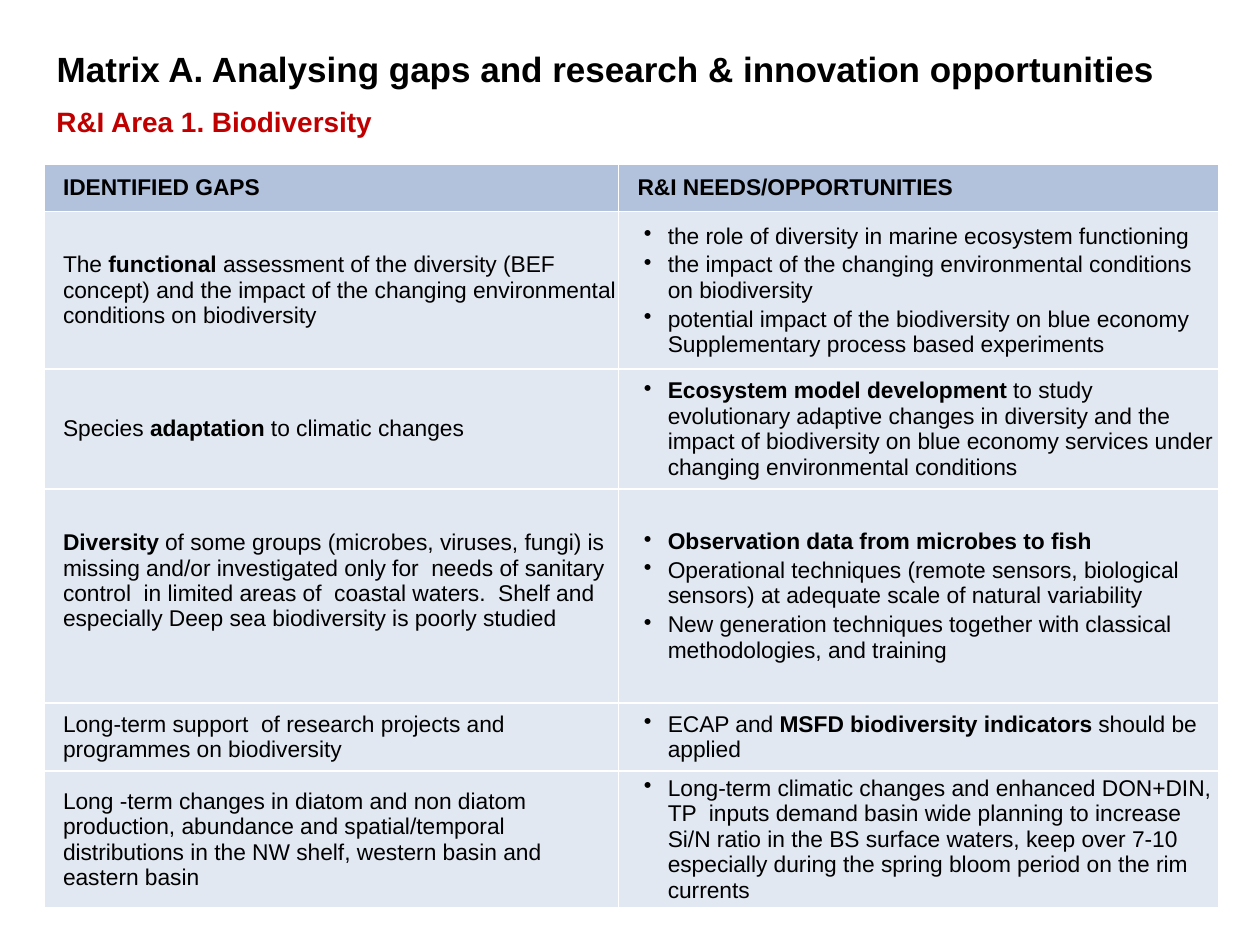
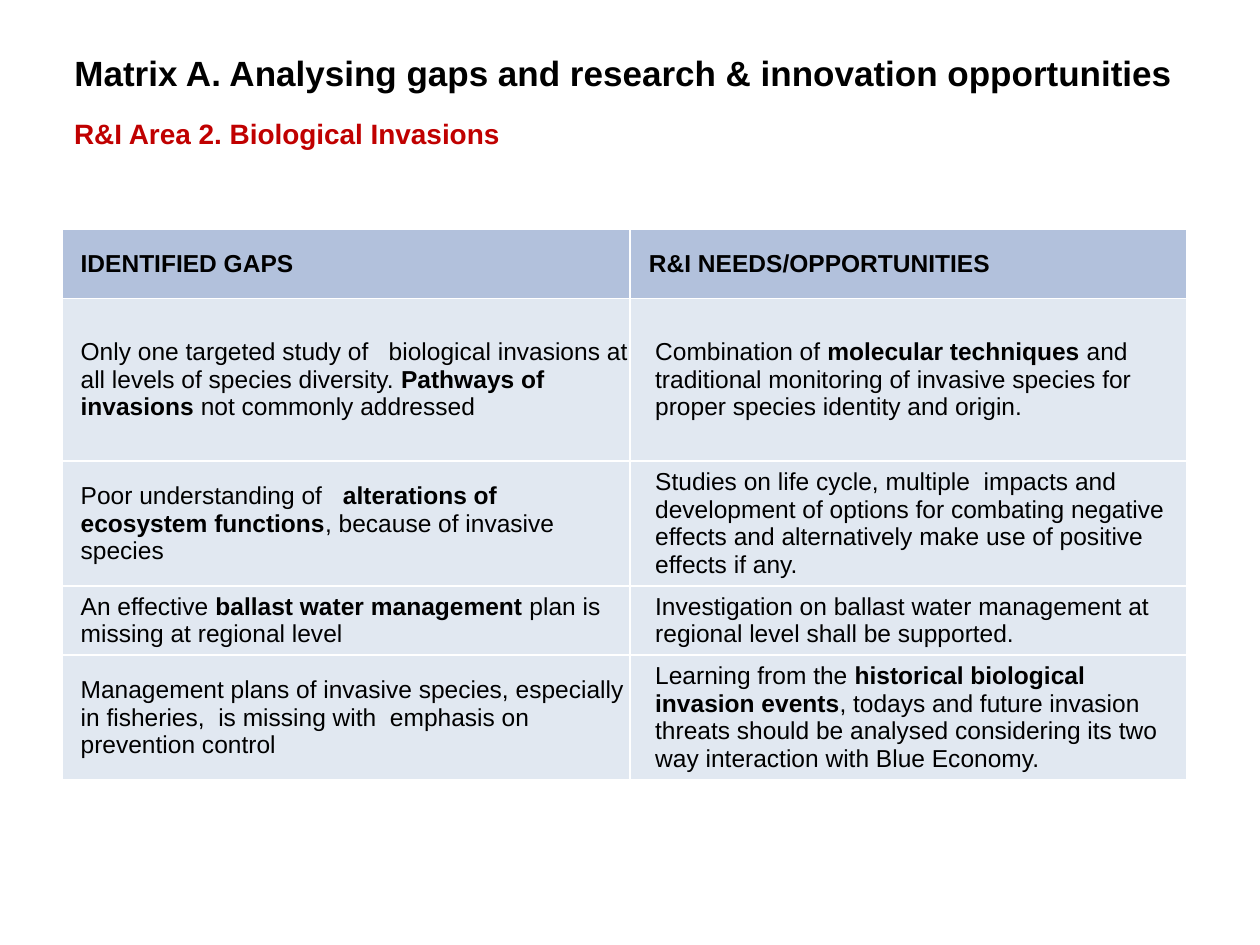
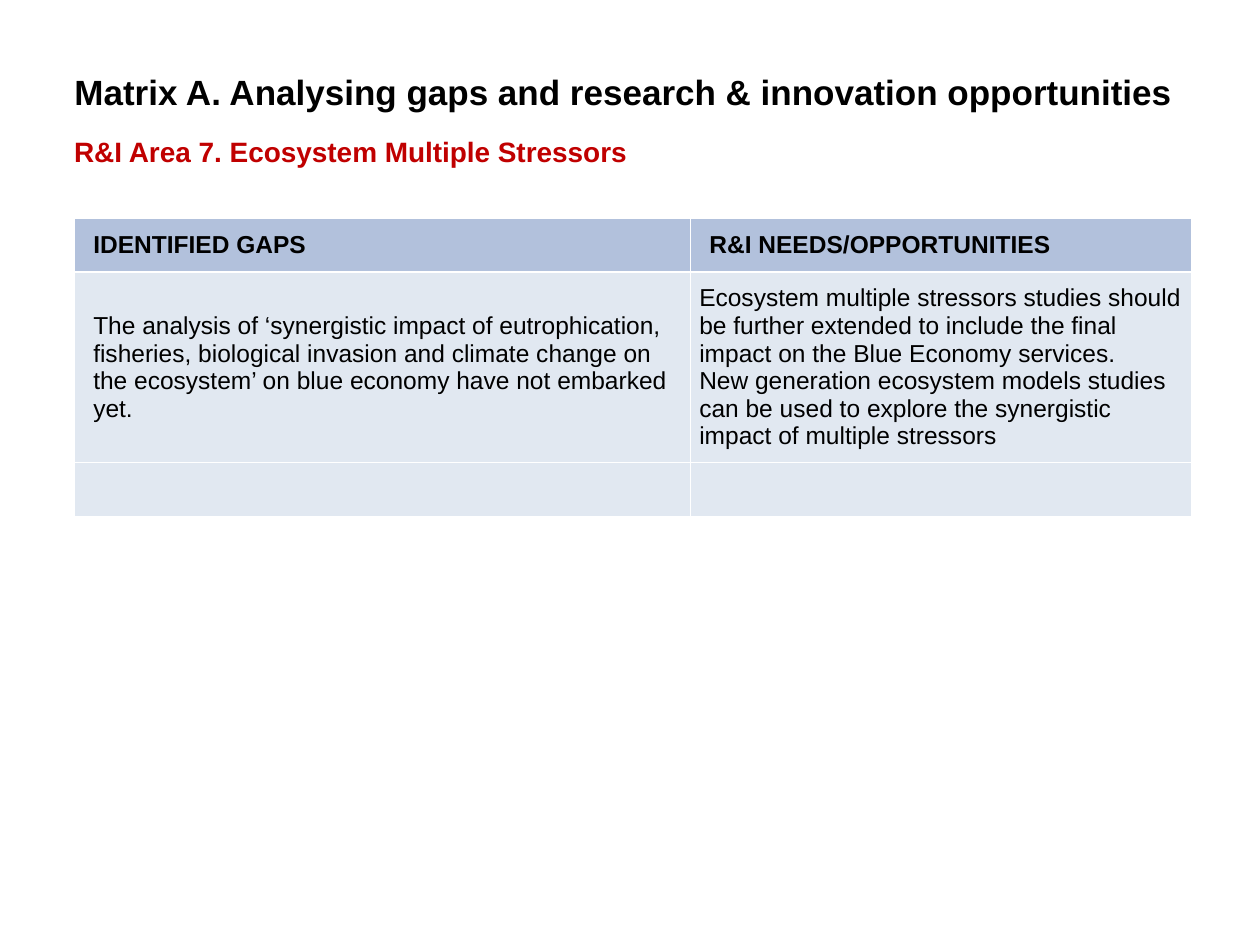
from dataclasses import dataclass

from lxml import etree
from pptx import Presentation
from pptx.dml.color import RGBColor
from pptx.enum import text as t
from pptx.oxml.ns import qn
from pptx.util import Inches, Pt

# Shared style
FONT = "Arial"
BLACK, RED, WHITE = "000000", "C00000", "FFFFFF"
HEADER_FILL, BODY_FILL = "B2C1DC", "E1E8F1"
TITLE = "Matrix A. Analysing gaps and research & innovation opportunities"
HEADERS = ("IDENTIFIED GAPS", "R&I NEEDS/OPPORTUNITIES")
GAP_INDENT = 0.15


@dataclass
class Row:
    height: float
    gap: str = ""
    needs: tuple = ()
    needs_space: float = 3
    gap_lift: float = 0  # bottom margin that raises the gap text


@dataclass
class Matrix:
    area: str
    title_at: tuple
    area_at: tuple
    table_at: tuple  # left, top
    columns: tuple
    size: int
    header_height: float
    rows: list
    needs_indent: tuple  # margin, first line
    bullet: str = ""
    needs_margin: float = 0


# Content: bold words stand between double asterisks
MATRICES = [
    Matrix(
        "R&I Area 1. Biodiversity",
        (0.35, 0.25, 9.2, 0.59), (0.35, 0.78, 3.84, 0.37),
        (0.35, 1.3), (4.56, 4.76), 13, 0.38,
        [
            Row(1.25, "The **functional** assessment of the diversity (BEF concept) and the impact "
                "of the changing environmental conditions on biodiversity",
                ("the role of diversity in marine ecosystem functioning",
                 "the impact of the changing environmental conditions on biodiversity",
                 "potential impact of the biodiversity on blue economy Supplementary process "
                 "based experiments"), needs_space=1),
            Row(0.95, "Species **adaptation** to climatic changes",
                ("**Ecosystem model development** to study evolutionary adaptive changes in "
                 "diversity and the impact of biodiversity on blue economy services under "
                 "changing environmental conditions",), needs_space=1),
            Row(1.7, "**Diversity** of some groups (microbes, viruses, fungi) is  missing and/or "
                "investigated only for  needs of sanitary control  in limited areas of  coastal "
                "waters.  Shelf and especially Deep sea biodiversity is poorly studied",
                ("**Observation data from microbes to fish**",
                 "Operational techniques (remote sensors, biological sensors) at adequate scale "
                 "of natural variability",
                 "New generation techniques together with classical methodologies, and training"),
                needs_space=1, gap_lift=0.24),
            Row(0.54, "Long-term support  of research projects and programmes on biodiversity",
                ("ECAP and **MSFD biodiversity indicators **should be applied",)),
            Row(1.01, "Long -term changes in diatom and non diatom production, abundance and "
                "spatial/temporal  distributions in the NW shelf, western basin and eastern basin",
                ("Long-term climatic changes and enhanced DON+DIN, TP  inputs demand basin wide "
                 "planning to increase Si/N ratio in the BS surface waters, keep over 7-10 "
                 "especially during the spring bloom period on the rim currents",)),
        ],
        needs_indent=(0.39, -0.19), bullet="•"),
    Matrix(
        "R&I Area 2. Biological Invasions",
        (0.49, 0.28, 8.93, 0.59), (0.49, 0.88, 3.84, 0.37),
        (0.49, 1.82), (4.51, 4.42), 14, 0.55,
        [
            Row(1.29, "Only one targeted study of   biological invasions at all levels of species "
                "diversity. **Pathways of invasions **not commonly addressed",
                ("Combination of **molecular techniques **and traditional monitoring of invasive "
                 "species for proper species identity and origin.",)),
            Row(0.99, "Poor understanding of   **alterations of ecosystem functions**, because of "
                "invasive species",
                ("Studies on life cycle, multiple  impacts and  development of options for "
                 "combating negative effects and alternatively make use of positive effects "
                 "if any.",)),
            Row(0.55, "An effective **ballast water management **plan is missing at regional level",
                ("Investigation on ballast water management at regional level shall be "
                 "supported.",)),
            Row(0.99, "Management plans of invasive species, especially in fisheries,  is missing "
                "with  emphasis on prevention control",
                ("Learning from the **historical biological invasion events**, todays and future "
                 "invasion threats should be analysed considering its two way interaction with "
                 "Blue Economy.",)),
        ],
        needs_indent=(0.2, 0)),
    Matrix(
        "R&I Area 7. Ecosystem Multiple Stressors",
        (0.49, 0.43, 8.98, 0.59), (0.49, 1.02, 4.87, 0.37),
        (0.59, 1.73), (4.89, 3.98), 14, 0.43,
        [
            Row(1.51, "The analysis of ‘synergistic impact of eutrophication, fisheries, biological "
                "invasion and climate change on the ecosystem’ on blue economy have not embarked "
                "yet.",
                ("Ecosystem multiple stressors studies should be further extended to include the "
                 "final impact on the Blue Economy services.",
                 "New generation ecosystem models studies can be used to explore the synergistic "
                 "impact of multiple stressors"), needs_space=0),
            Row(0.43),
        ],
        needs_indent=(0, 0), needs_margin=0.07),
]


def color(value):
    return RGBColor.from_string(value)


def write(frame, lines, size, ink=BLACK, bold=False, indent=(0, 0), space=0, bullet=""):
    """Fill a text frame with one paragraph per line."""
    for number, line in enumerate(lines):
        para = frame.add_paragraph() if number else frame.paragraphs[0]
        para.alignment = t.PP_ALIGN.LEFT
        para.space_before = para.space_after = Pt(space)
        properties = para._p.get_or_add_pPr()
        properties.set("marL", str(Inches(indent[0])))
        properties.set("indent", str(Inches(indent[1])))
        if bullet:
            etree.SubElement(properties, qn("a:buChar")).set("char", bullet)
        for part, words in enumerate(line.split("**")):
            if words:
                span = para.add_run()
                span.text = words
                span.font.name, span.font.size = FONT, Pt(size)
                span.font.bold = bold or part % 2 == 1
                span.font.color.rgb = color(ink)


def format_cell(cell, fill, side=0, bottom=0):
    """Set margins, white borders and fill."""
    cell.vertical_anchor = t.MSO_ANCHOR.MIDDLE
    cell.margin_left = cell.margin_right = Inches(side)
    cell.margin_top, cell.margin_bottom = 0, Inches(bottom)
    properties = cell._tc.get_or_add_tcPr()
    for edge in "LRTB":
        line = etree.SubElement(properties, qn(f"a:ln{edge}"), w=str(Pt(1)))
        paint = etree.SubElement(line, qn("a:solidFill"))
        etree.SubElement(paint, qn("a:srgbClr"), val=WHITE)
    cell.fill.solid()
    cell.fill.fore_color.rgb = color(fill)


def add_headings(page, matrix):
    title = page.shapes.title
    title.left, title.top, title.width, title.height = map(Inches, matrix.title_at)
    title.text_frame.auto_size = t.MSO_AUTO_SIZE.NONE
    title.text_frame.vertical_anchor = t.MSO_ANCHOR.MIDDLE
    write(title.text_frame, [TITLE], 20, bold=True)

    area = page.shapes.add_textbox(*map(Inches, matrix.area_at)).text_frame
    area.word_wrap = True
    area.auto_size = t.MSO_AUTO_SIZE.SHAPE_TO_FIT_TEXT
    write(area, [matrix.area], 16, ink=RED, bold=True)


def add_matrix(page, matrix):
    heights = [matrix.header_height] + [row.height for row in matrix.rows]
    extent = (*matrix.table_at, sum(matrix.columns), sum(heights))
    table = page.shapes.add_table(len(heights), 2, *map(Inches, extent)).table
    table.horz_banding = False
    for column, width in zip(table.columns, matrix.columns):
        column.width = Inches(width)
    for line, height in zip(table.rows, heights):
        line.height = Inches(height)

    # Header row
    for number, header in enumerate(HEADERS):
        cell = table.cell(0, number)
        format_cell(cell, HEADER_FILL)
        write(cell.text_frame, [header], matrix.size, bold=True, indent=(GAP_INDENT, 0), space=3)

    # Gaps on the left, needs on the right
    for number, row in enumerate(matrix.rows, 1):
        gap, needs = table.cell(number, 0), table.cell(number, 1)
        format_cell(gap, BODY_FILL, bottom=row.gap_lift)
        format_cell(needs, BODY_FILL, side=matrix.needs_margin)
        write(gap.text_frame, [row.gap], matrix.size, indent=(GAP_INDENT, 0), space=3)
        write(needs.text_frame, row.needs, matrix.size, indent=matrix.needs_indent,
              space=row.needs_space, bullet=matrix.bullet)


def main():
    deck = Presentation()
    deck.slide_width, deck.slide_height = Inches(10), Inches(7.5)
    title_only = deck.slide_layouts[5]
    for matrix in MATRICES:
        page = deck.slides.add_slide(title_only)
        add_headings(page, matrix)
        add_matrix(page, matrix)
    deck.save("out.pptx")


if __name__ == "__main__":
    main()
